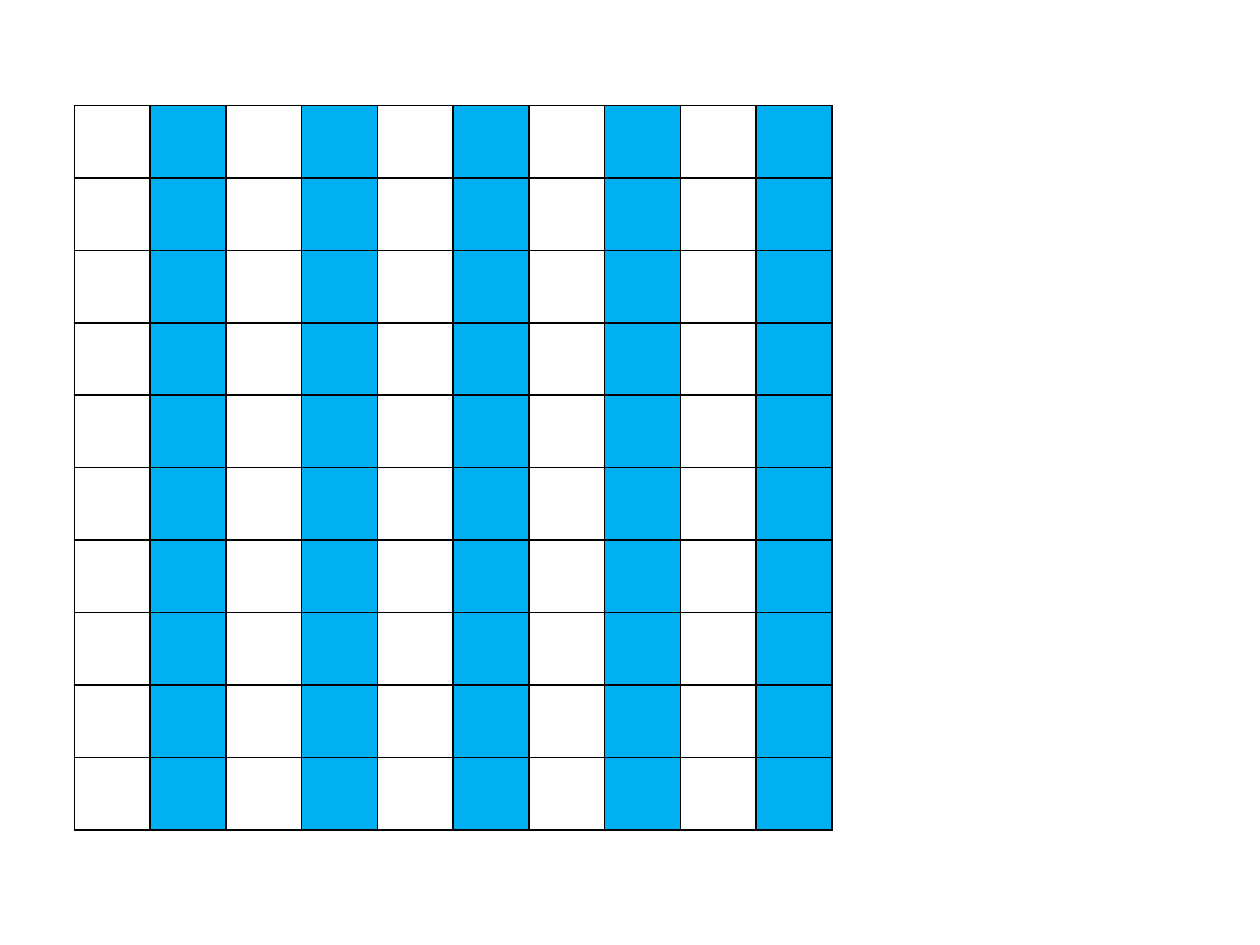
from lxml import etree
from pptx import Presentation
from pptx.dml.color import RGBColor
from pptx.oxml import ns
from pptx.util import Pt

SIZE = 10
STRIPES = ["FFFFFF", "00B0F0"]


def color(value):
    return RGBColor.from_string(value)


def add_borders(cell, value, width):
    tcPr = cell._tc.get_or_add_tcPr()
    for side in ("lnL", "lnR", "lnT", "lnB"):
        ln = etree.SubElement(tcPr, ns.qn(f"a:{side}"), w=str(Pt(width)))
        fill = etree.SubElement(ln, ns.qn("a:solidFill"))
        etree.SubElement(fill, ns.qn("a:srgbClr"), val=value)


prs = Presentation()
prs.slide_width, prs.slide_height = Pt(720), Pt(540)
s = prs.slides.add_slide(prs.slide_layouts[6])

grid = s.shapes.add_table(SIZE, SIZE, Pt(42.5), Pt(60.3), Pt(433), Pt(414)).table
grid.first_row = False
grid.horz_banding = False

for row in range(SIZE):
    for col in range(SIZE):
        cell = grid.cell(row, col)
        add_borders(cell, "000000", 1)
        cell.fill.solid()
        cell.fill.fore_color.rgb = color(STRIPES[col % 2])

prs.save("out.pptx")
